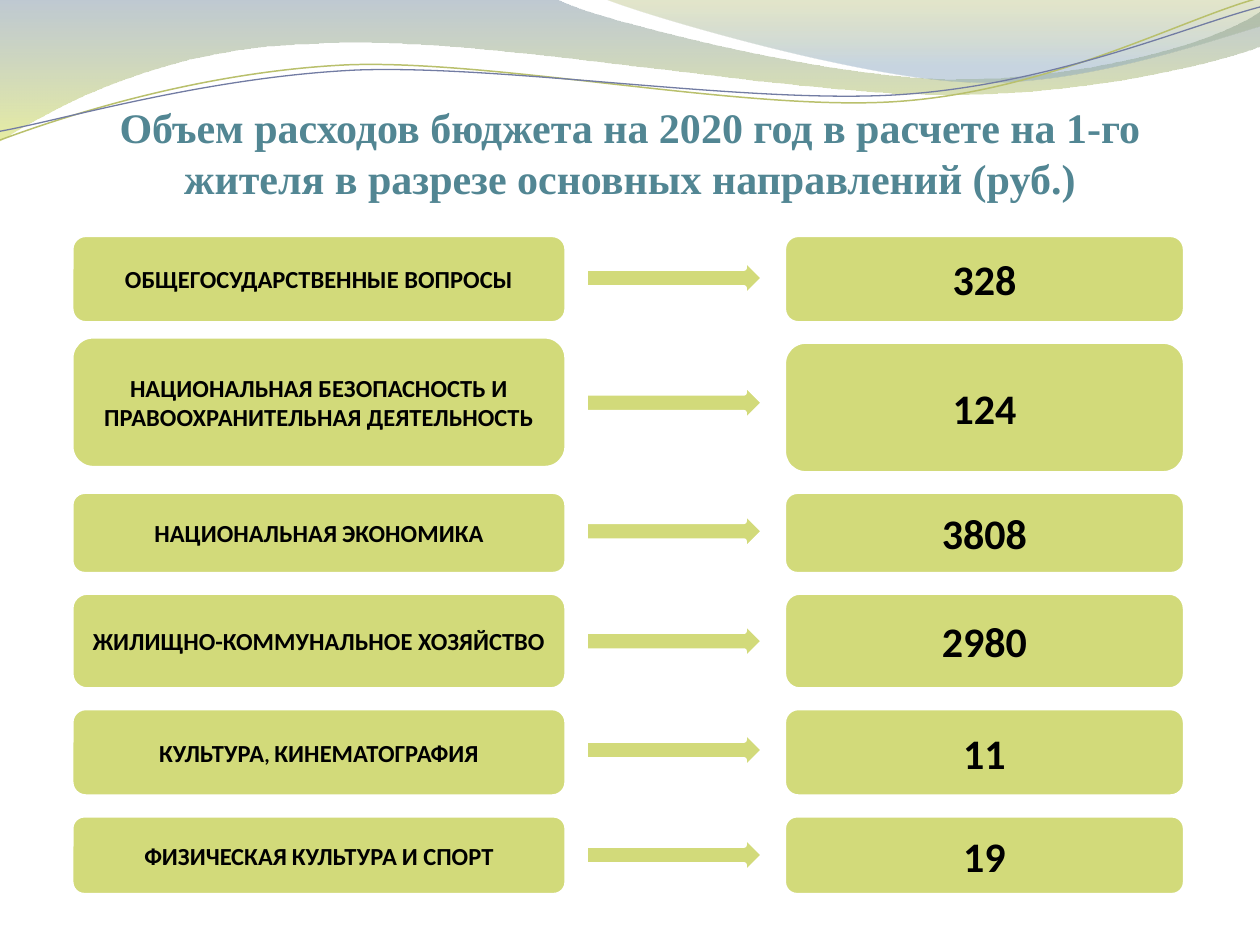
from lxml import etree
from pptx import Presentation
from pptx.dml.color import RGBColor
from pptx.enum import shapes, text
from pptx.oxml import ns
from pptx.util import Pt

GREEN = RGBColor(0xD2, 0xDA, 0x7A)
WHITE = RGBColor(0xFF, 0xFF, 0xFF)
BLACK = RGBColor(0, 0, 0)
TEAL = RGBColor(0x52, 0x86, 0x93)
SLATE = RGBColor(0x72, 0x88, 0x9B)
LIME = RGBColor(0xD3, 0xDE, 0x57)
OLIVE = RGBColor(0xA4, 0xAC, 0x50)
SKY = RGBColor(0x84, 0xA3, 0xBD)
MOSS = RGBColor(0xB9, 0xC0, 0x6C)
PLUM = RGBColor(0x72, 0x7C, 0xA3)

TITLE = ("Объем расходов бюджета на 2020 год в расчете на 1-го жителя "
         "в разрезе основных направлений (руб.)")
ROWS = [
    (["ОБЩЕГОСУДАРСТВЕННЫЕ ВОПРОСЫ"], "328", 134, 51, 0, 13.7),
    (["НАЦИОНАЛЬНАЯ БЕЗОПАСНОСТЬ И ПРАВООХРАНИТЕЛЬНАЯ ДЕЯТЕЛЬНОСТЬ"],
     "124", 192, 75.7, 3, 27),
    (["НАЦИОНАЛЬНАЯ", " ", "ЭКОНОМИКА"], "3808", 280.8, 47.5, 0, 11.6),
    (["ЖИЛИЩНО-КОММУНАЛЬНОЕ ХОЗЯЙСТВО"], "2980", 338.4, 55.8, 0, 16.8),
    (["КУЛЬТУРА", ", ", "КИНЕМАТОГРАФИЯ"], "11", 404.4, 51, 0, 13),
    (["ФИЗИЧЕСКАЯ", " ", "КУЛЬТУРА", " ", "И СПОРТ"], "19", 465.7, 46, 0, 11.7),
]
BANDS = [
    ([(0, 0), (317, -1), (343, 12, 478, 45, 546, 45), (614, 45, 690, 27, 720, 6.5),
      (721, 26), (708, 32, 626, 55, 537, 54), (446, 54, 275, 20, 185, 24.5),
      (93, 26, 33, 60, -1, 81), (0, 0)],
     [(0, SLATE, 45), (1, LIME, 55)]),
    ([(345, -1), (366, 8, 491, 45, 554, 47), (616, 50, 692, 23, 720, 15),
      (720, 0), (345, -1)],
     [(0, OLIVE, 30), (0.8, SKY, 45)]),
]
LINES = [
    ([(-1.4, 63.1), (34.2, 51.7, 114.3, 29.4, 199.4, 29.5),
      (284.4, 30.5, 425.9, 67.2, 512.1, 65.2),
      (599.2, 63.3, 676.1, 25.9, 720.6, 16)], MOSS, 0.85),
    ([(-1.1, 58), (33.1, 53.6, 118.2, 32.6, 204.3, 32.7),
      (290.3, 33.7, 429.1, 63.3, 515.3, 61.3),
      (601.5, 59.4, 679, 30, 721.4, 21)], PLUM, 0.75),
]


def add_wave(slide, left, top, path, close):
    dots = [(Pt(left + part[-2]), Pt(top + part[-1])) for part in path]
    pen = slide.shapes.build_freeform(*dots[0])
    pen.add_line_segments(dots[1:], close=close)
    wave = pen.convert_to_shape()
    wave.shadow.inherit = False
    nodes = list(wave.element.iter(ns.qn("a:lnTo")))
    for part, node in zip(path[1:], nodes):
        if len(part) == 6:
            node.tag = ns.qn("a:cubicBezTo")
            for i in (0, 2):
                x, y = Pt(left + part[i]) - wave.left, Pt(top + part[i + 1]) - wave.top
                dot = etree.SubElement(node, ns.qn("a:pt"), x=str(x), y=str(y))
                node.insert(i // 2, dot)
    return wave


def add_header(slide, left, top):
    for path, stops in BANDS:
        band = add_wave(slide, left, top, path, True)
        band.line.fill.background()
        band.fill.gradient()
        band.fill.gradient_angle = 270
        marks = band.element.iter(ns.qn("a:gs"))
        for stop, mark, (place, color, alpha) in zip(band.fill.gradient_stops, marks, stops):
            stop.position = place
            stop.color.rgb = color
            etree.SubElement(mark[0], ns.qn("a:alpha"), val=str(alpha * 1000))
    for path, color, width in LINES:
        line = add_wave(slide, left, top, path, False)
        line.rotation = 357.3
        line.fill.background()
        line.line.color.rgb = color
        line.line.width = Pt(width)


def add_title(slide, left, top, width, height):
    title = slide.shapes.title
    title.left, title.top = Pt(left), Pt(top)
    title.width, title.height = Pt(width), Pt(height)
    frame = title.text_frame
    frame.text = TITLE
    frame.word_wrap = True
    frame.auto_size = text.MSO_AUTO_SIZE.NONE
    frame.vertical_anchor = text.MSO_ANCHOR.BOTTOM
    frame.margin_left = frame.margin_right = frame.margin_top = 0
    frame.margin_bottom = Pt(1.5)
    para = frame.paragraphs[0]
    para.alignment = text.PP_ALIGN.CENTER
    font = para.font
    font.name, font.size, font.bold = "Times New Roman", Pt(24), True
    font.color.rgb = TEAL
    slide.shapes.element.append(title.element)


def add_block(slide, kind, left, top, width, height):
    block = slide.shapes.add_shape(kind, Pt(left), Pt(top), Pt(width), Pt(height))
    block.shadow.inherit = False
    block.fill.solid()
    block.fill.fore_color.rgb = GREEN
    block.line.color.rgb = WHITE
    block.line.width = Pt(3)
    return block


def add_card(slide, words, size, left, top, width, height):
    card = add_block(slide, shapes.MSO_SHAPE.ROUNDED_RECTANGLE, left, top, width, height)
    frame = card.text_frame
    frame.word_wrap = True
    frame.vertical_anchor = text.MSO_ANCHOR.MIDDLE
    para = frame.paragraphs[0]
    para.alignment = text.PP_ALIGN.CENTER
    font = para.font
    font.name, font.size, font.bold = "Calibri", Pt(size), True
    font.color.rgb = BLACK
    for i, word in enumerate(words):
        run = para.add_run()
        run.text = word
        if i % 2:
            run.font.size = Pt(12)


def add_row(slide, words, value, left, top, height, drop, dip):
    add_card(slide, words, 14, left, top, 283.5, height)
    add_block(slide, shapes.MSO_SHAPE.RIGHT_ARROW, left + 294, top + dip, 102, 22.3)
    add_card(slide, [value], 24, left + 407.2, top + drop, 229.7, height)


def main():
    deck = Presentation()
    deck.slide_width, deck.slide_height = Pt(720), Pt(540)
    slide = deck.slides.add_slide(deck.slide_layouts[5])
    add_header(slide, 0, 0)
    add_title(slide, 59, 54.7, 602, 62.6)
    for words, value, top, height, drop, dip in ROWS:
        add_row(slide, words, value, 40.5, top, height, drop, dip)
    deck.save("out.pptx")


if __name__ == "__main__":
    main()
